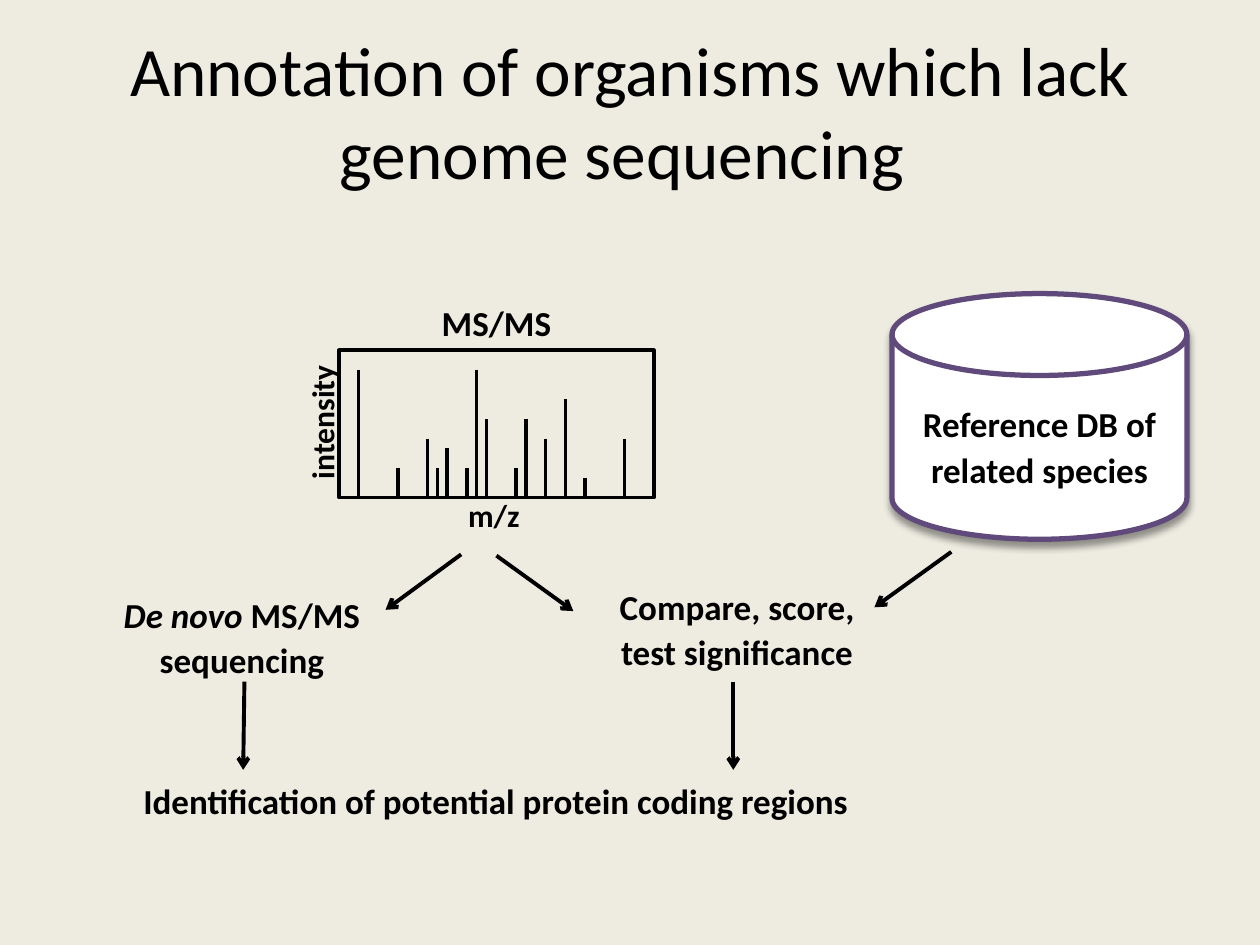
from typing import NamedTuple

from lxml.etree import SubElement
from pptx import Presentation
from pptx.dml.color import RGBColor
from pptx.enum.shapes import MSO_CONNECTOR as Connector, MSO_SHAPE as Preset
from pptx.enum.text import MSO_ANCHOR as Anchor, MSO_AUTO_SIZE as AutoSize, PP_ALIGN as Align
from pptx.oxml.ns import qn
from pptx.util import Inches, Pt

COLUMNS, ROWS = 100, 75
CELL = Inches(10) / COLUMNS
INK, PAPER, WHITE, PURPLE = "000000", "EEECE1", "FFFFFF", "604A7B"
FONT = "Calibri"


class Box(NamedTuple):
    """Left, top, width and height in grid cells."""
    left: float
    top: float
    width: float
    height: float


class Arrow(NamedTuple):
    x1: float
    y1: float
    x2: float
    y2: float


class Label(NamedTuple):
    box: Box
    text: str
    italic_lead: str = ""


class AxisLabel(NamedTuple):
    box: Box
    text: str
    size: float
    rotation: float = 0


class Peak(NamedTuple):
    """Position and height in spectrum steps."""
    step: int
    height: int


SPECTRUM = Box(26.9, 27.8, 25, 11.7)
SPECTRUM_STEP = SPECTRUM.width / 32
PEAKS = [Peak(*pair) for pair in (
    (2, 13), (6, 3), (9, 6), (10, 3), (11, 5), (13, 3), (14, 13),
    (15, 8), (18, 3), (19, 8), (21, 6), (23, 10), (25, 2), (29, 6))]
AXIS_LABELS = [
    AxisLabel(Box(36.1, 38.9, 6.2, 4), "m/z", 18),
    AxisLabel(Box(20, 31.5, 11.1, 4), "intensity", 18, 270),
    AxisLabel(Box(34, 23.4, 10.8, 4.4), "MS/MS", 20),
]
DATABASE = Box(70.8, 23.3, 23.4, 19.5)
LABELS = [
    Label(Box(46.2, 45.7, 24.6, 8.3), "Compare, score, test significance"),
    Label(Box(8.7, 61.1, 61.3, 4.7), "Identification of potential protein coding regions"),
    Label(Box(71.3, 31.2, 22.4, 8.3), "Reference DB of related species"),
    Label(Box(6.9, 46.3, 24.6, 8.3), "MS/MS sequencing", "De novo "),
]
ARROWS = [
    Arrow(39.4, 44.1, 45.5, 48.5),
    Arrow(36.6, 44, 30.6, 48.4),
    Arrow(75.5, 43.8, 69.4, 48.2),
    Arrow(58.2, 54.1, 58.2, 61.1),
    Arrow(19.4, 54.1, 19.3, 61.1),
]


def cells(*values: float) -> list[int]:
    return [round(value * CELL) for value in values]


def rgb(color: str) -> RGBColor:
    return RGBColor.from_string(color)


def add_run(paragraph, text: str, *, size: float = 20, bold: bool = True,
            italic: bool = False, color: str = INK) -> None:
    run = paragraph.add_run()
    run.text = text
    font = run.font
    font.name, font.size, font.bold, font.italic = FONT, Pt(size), bold, italic
    font.color.rgb = rgb(color)


def add_text(shapes, box: Box, text: str, *, italic_lead: str = "", size: float = 20,
             wrap: bool = True, spacing: float | None = None, rotation: float = 0) -> None:
    shape = shapes.add_textbox(*cells(*box))
    shape.rotation = rotation
    frame = shape.text_frame
    frame.word_wrap = wrap
    frame.auto_size = AutoSize.SHAPE_TO_FIT_TEXT
    paragraph = frame.paragraphs[0]
    paragraph.alignment = Align.CENTER
    if spacing:
        paragraph.line_spacing = Pt(spacing)
    if italic_lead:
        add_run(paragraph, italic_lead, size=size, italic=True)
    add_run(paragraph, text, size=size)


def add_line(shapes, ends: Arrow, *, width: float, arrowhead: bool = False) -> None:
    connector = shapes.add_connector(Connector.STRAIGHT, *cells(*ends))
    connector.line.color.rgb = rgb(INK)
    connector.line.width = Pt(width)
    if arrowhead:
        SubElement(connector.line._get_or_add_ln(), qn("a:tailEnd"), type="arrow")
    SubElement(connector._element.spPr, qn("a:effectLst"))


def add_outlined(shapes, preset: Preset, box: Box, *, line: str, width: float,
                 fill: str | None = None):
    shape = shapes.add_shape(preset, *cells(*box))
    shape.shadow.inherit = False
    if fill:
        shape.fill.solid()
        shape.fill.fore_color.rgb = rgb(fill)
    else:
        shape.fill.background()
    shape.line.color.rgb = rgb(line)
    shape.line.width = Pt(width)
    return shape


def add_drop_shadow(shape) -> None:
    effects = shape._element.spPr.find(qn("a:effectLst"))
    shadow = SubElement(effects, qn("a:outerShdw"), blurRad=str(Pt(4)), dist=str(Pt(3)),
                        dir=str(90 * 60000), rotWithShape="0")
    color = SubElement(shadow, qn("a:srgbClr"), val=INK)
    SubElement(color, qn("a:alpha"), val="40000")


def add_spectrum(slide) -> None:
    shapes = slide.shapes.add_group_shape().shapes
    add_outlined(shapes, Preset.RECTANGLE, SPECTRUM, line=INK, width=2)
    baseline = SPECTRUM.top + SPECTRUM.height
    for peak in PEAKS:
        x = SPECTRUM.left + peak.step * SPECTRUM_STEP
        top = baseline - peak.height * SPECTRUM_STEP
        add_line(shapes, Arrow(x, top, x, baseline), width=2)
    for label in AXIS_LABELS:
        add_text(shapes, label.box, label.text, size=label.size,
                 wrap=False, rotation=label.rotation)


def format_title(slide, text: str) -> None:
    title = slide.shapes.title
    title.left, title.top, title.width, title.height = cells(5, 2.5, 90, 12.5)
    frame = title.text_frame
    frame.auto_size = AutoSize.NONE
    frame.vertical_anchor = Anchor.MIDDLE
    paragraph = frame.paragraphs[0]
    paragraph.alignment = Align.CENTER
    add_run(paragraph, text, size=39.6, bold=False)


def main() -> None:
    presentation = Presentation()
    presentation.slide_width, presentation.slide_height = cells(COLUMNS, ROWS)
    slide = presentation.slides.add_slide(presentation.slide_layouts[5])
    slide.background.fill.solid()
    slide.background.fill.fore_color.rgb = rgb(PAPER)

    format_title(slide, "Annotation of organisms which lack genome sequencing ")
    database = add_outlined(slide.shapes, Preset.FLOWCHART_MAGNETIC_DISK, DATABASE,
                            line=PURPLE, width=3, fill=WHITE)
    add_drop_shadow(database)
    add_spectrum(slide)
    for label in LABELS:
        add_text(slide.shapes, label.box, label.text,
                 italic_lead=label.italic_lead, spacing=26)
    for arrow in ARROWS:
        add_line(slide.shapes, arrow, width=2.25, arrowhead=True)
    presentation.save("out.pptx")


if __name__ == "__main__":
    main()
